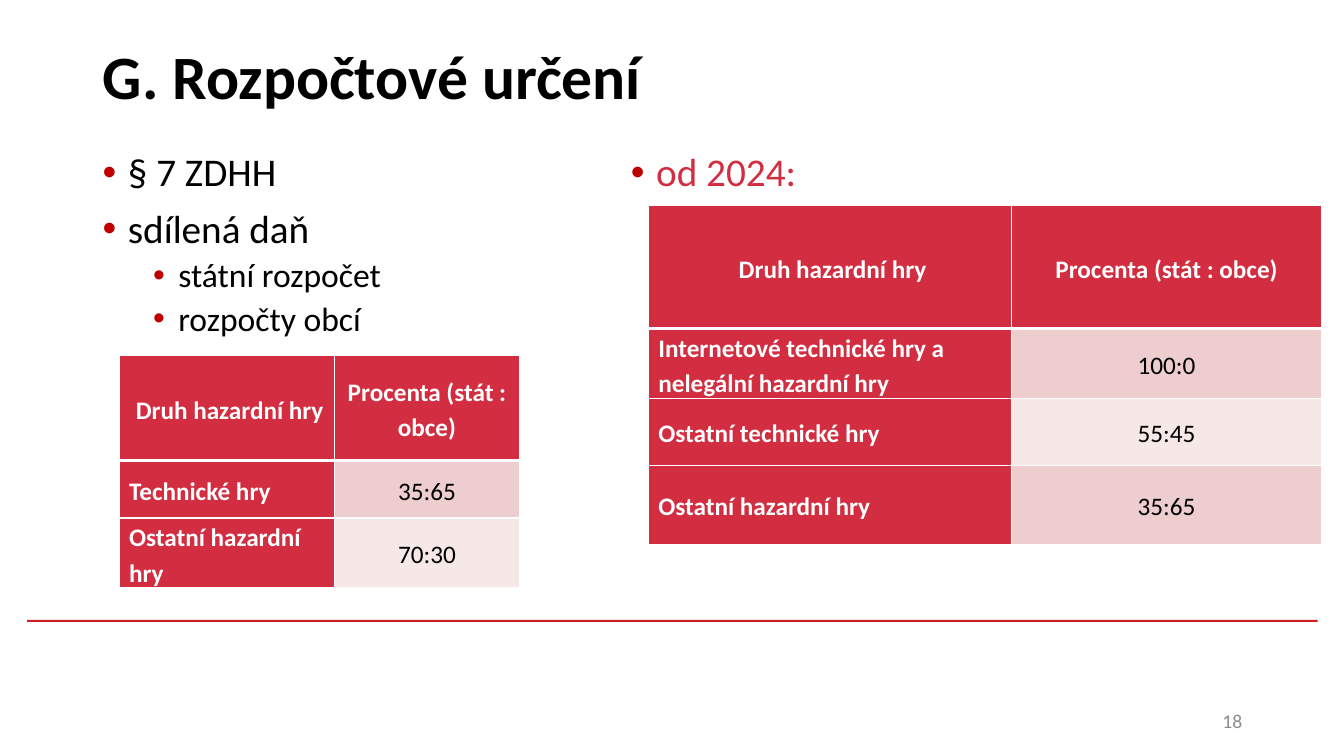
import pptx
import pptx.util
import pptx.dml.color
import pptx.enum.shapes
import pptx.enum.text
import pptx.oxml
import pptx.oxml.ns

Inches, Pt = pptx.util.Inches, pptx.util.Pt
ALIGN = pptx.enum.text.PP_ALIGN
MIDDLE = pptx.enum.text.MSO_ANCHOR.MIDDLE

COLORS = {
    "text": "000000", "white": "FFFFFF", "number": "8C8C8C", "rule": "CD1F21",
    "bullet": "C00000", "red": "D22D40", "band1": "EECDCF", "band2": "F7E8E8",
}
# size, indent and space before of each bullet level
LEVELS = [(28, 0.25, 10), (24, 0.75, 5)]
HEADER = (" Druh hazardní hry", "Procenta (stát : obce)")


def rgb(name):
    return pptx.dml.color.RGBColor.from_string(COLORS[name])


def xml(tag, attrs, inner=""):
    ns = pptx.oxml.ns.nsdecls("a")
    return pptx.oxml.parse_xml(f"<a:{tag} {ns} {attrs}>{inner}</a:{tag}>")


class SlideBuilder:
    font = "Calibri"

    def __init__(self, slide):
        self.slide = slide

    def add_text(self, p, text, size, color="text", bold=False, **formats):
        """Fill a paragraph; formats are further paragraph attributes."""
        for name, value in formats.items():
            setattr(p, name, value)
        r = p.add_run()
        r.text = text
        for name, value in {"name": self.font, "size": Pt(size), "bold": bold}.items():
            setattr(r.font, name, value)
        r.font.color.rgb = rgb(color)

    def box(self, *at):
        tf = self.slide.shapes.add_textbox(*map(Inches, at)).text_frame
        tf.word_wrap = True
        return tf

    def title(self, text, *at):
        sp = self.slide.shapes.title
        sp.left, sp.top, sp.width, sp.height = map(Inches, at)
        tf = sp.text_frame
        tf.auto_size = pptx.enum.text.MSO_AUTO_SIZE.NONE
        tf.vertical_anchor = MIDDLE
        self.add_text(tf.paragraphs[0], text, 44, bold=True, alignment=ALIGN.LEFT)

    def rule(self, *at):
        kind = pptx.enum.shapes.MSO_SHAPE.RECTANGLE
        sp = self.slide.shapes.add_shape(kind, *map(Inches, at))
        sp.shadow.inherit = False
        sp.fill.solid()
        sp.fill.fore_color.rgb = rgb("rule")
        sp.line.fill.background()

    def number(self, text, *at):
        tf = self.box(*at)
        tf.vertical_anchor = MIDDLE
        self.add_text(tf.paragraphs[0], text, 14, "number", alignment=ALIGN.RIGHT)

    def bullets(self, items, *at, color="text"):
        """Items are (level, text) pairs."""
        tf = self.box(*at)
        for i, (level, text) in enumerate(items):
            p = tf.add_paragraph() if i else tf.paragraphs[0]
            size, indent, before = LEVELS[level]
            pPr = p._p.get_or_add_pPr()
            pPr.set("marL", str(Inches(indent)))
            pPr.set("indent", str(Inches(-0.25)))
            pPr.append(xml("buClr", "", f'<a:srgbClr val="{COLORS["bullet"]}"/>'))
            pPr.append(xml("buFont", 'typeface="Arial"'))
            pPr.append(xml("buChar", 'char="•"'))
            self.add_text(p, text, size, color, level=level, line_spacing=0.9,
                          space_before=Pt(before if i else 0))

    def borders(self, cell, row):
        """White hairlines, with a thick line under the header row."""
        widths = {"L": 1, "R": 1, "T": 3 if row == 1 else 1, "B": 1 if row else 3}
        fill = f'<a:solidFill><a:srgbClr val="{COLORS["white"]}"/></a:solidFill>'
        for side, width in widths.items():
            cell._tc.get_or_add_tcPr().append(xml(f"ln{side}", f'w="{Pt(width)}"', fill))

    def table(self, rows, left, top, widths, heights):
        rows = [HEADER] + rows
        at = map(Inches, (left, top, sum(widths), sum(heights)))
        table = self.slide.shapes.add_table(len(rows), len(widths), *at).table
        table.first_col = True
        for column, width in zip(table.columns, widths):
            column.width = Inches(width)
        for i, (row, height) in enumerate(zip(rows, heights)):
            table.rows[i].height = Inches(height)
            for j, text in enumerate(row):
                cell = table.cell(i, j)
                heading = i == 0 or j == 0
                self.borders(cell, i)
                cell.fill.solid()
                band = "band1" if i % 2 else "band2"
                cell.fill.fore_color.rgb = rgb("red" if heading else band)
                cell.vertical_anchor = MIDDLE
                cell.margin_left = cell.margin_right = Inches(0.1)
                cell.margin_top = cell.margin_bottom = 0
                self.add_text(cell.text_frame.paragraphs[0], text, 18,
                              "white" if heading else "text", bold=heading,
                              line_spacing=1.15,
                              alignment=ALIGN.LEFT if i and not j else ALIGN.CENTER)


def main():
    prs = pptx.Presentation()
    prs.slide_width, prs.slide_height = Inches(13.33), Inches(7.5)
    s = SlideBuilder(prs.slides.add_slide(prs.slide_layouts[5]))

    s.rule(0.27, 6.15, 12.8, 0.02)
    s.title("G. Rozpočtové určení", 0.92, 0.02, 11.5, 1.45)
    s.bullets([(0, "§ 7 ZDHH"), (0, "sdílená daň"),
               (1, "státní rozpočet"), (1, "rozpočty obcí")],
              0.92, 1.47, 4.79, 4.57)
    s.number("18", 9.42, 6.95, 3, 0.4)
    s.table([("Technické hry", "35:65"), ("Ostatní hazardní hry", "70:30")],
            1.18, 3.53, [2.14, 1.83], [1.04, 0.57, 0.52])
    s.bullets([(0, "od 2024:")], 6.16, 1.47, 4.79, 4.57, color="red")
    s.table([("Internetové technické hry a nelegální hazardní hry", "100:0"),
             ("Ostatní technické hry", "55:45"),
             ("Ostatní hazardní hry", "35:65")],
            6.43, 2.04, [3.6, 3.08], [1.22, 0.67, 0.67, 0.78])
    prs.save("out.pptx")


if __name__ == "__main__":
    main()
